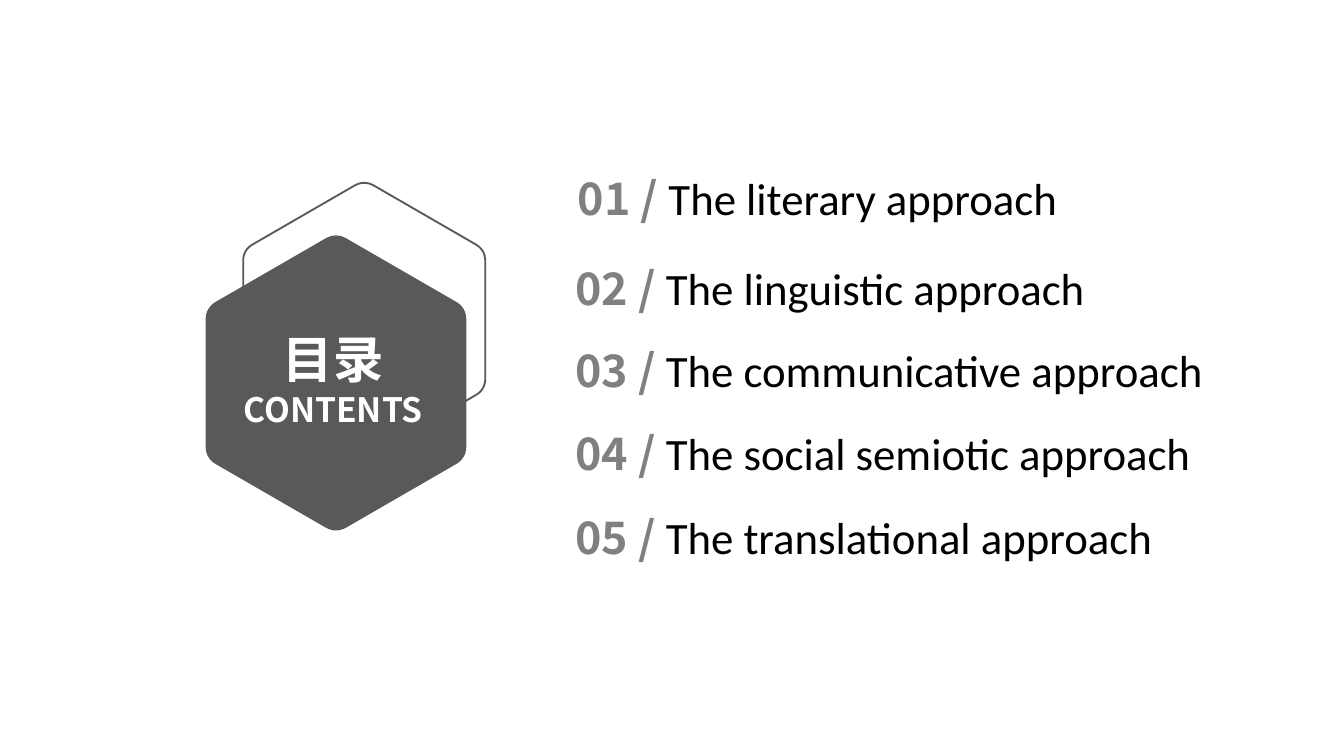
import math
from dataclasses import dataclass

import pptx
import pptx.dml.color
import pptx.enum.text
import pptx.oxml.ns
import pptx.util
from lxml import etree
from pptx.util import Inches


@dataclass(frozen=True)
class Theme:
    dark: pptx.dml.color.RGBColor = pptx.dml.color.RGBColor(0x59, 0x59, 0x59)
    grey: pptx.dml.color.RGBColor = pptx.dml.color.RGBColor(0x80, 0x80, 0x80)
    black: pptx.dml.color.RGBColor = pptx.dml.color.RGBColor(0, 0, 0)
    white: pptx.dml.color.RGBColor = pptx.dml.color.RGBColor(255, 255, 255)
    heading_font: str = "Noto Sans CJK SC"
    body_font: str = "Calibri"
    title_size: int = 27
    subtitle_size: int = 18
    item_size: int = 24


theme = Theme()


def add_rounded_hexagon(page, center_x, center_y, radius):
    """Draw a pointy-top hexagon whose corners are sampled quadratic curves."""
    corners = [
        (center_x + radius * math.sin(math.radians(60 * i)),
         center_y - radius * math.cos(math.radians(60 * i)))
        for i in range(6)
    ]
    cut, steps = 0.08, 8
    points = []
    for i, corner in enumerate(corners):
        before, after = corners[i - 1], corners[(i + 1) % 6]
        start, end = (
            [c + cut * (n - c) for c, n in zip(corner, neighbour)]
            for neighbour in (before, after)
        )
        for step in range(steps + 1):
            t = step / steps
            points.append(tuple(
                Inches((1 - t) ** 2 * s + 2 * t * (1 - t) * c + t ** 2 * e)
                for s, c, e in zip(start, corner, end)
            ))
    builder = page.shapes.build_freeform(*points[0])
    builder.add_line_segments(points[1:], close=True)
    hexagon = builder.convert_to_shape()
    hexagon.shadow.inherit = False
    return hexagon


def set_margins(frame):
    frame.margin_left = frame.margin_right = Inches(0.07)
    frame.margin_top = frame.margin_bottom = Inches(0.04)
    frame.vertical_anchor = pptx.enum.text.MSO_ANCHOR.TOP


deck = pptx.Presentation()
deck.slide_width = Inches(10)
deck.slide_height = Inches(10 * 9 / 16)
page = deck.slides.add_slide(deck.slide_layouts[5])

# Hexagon badge
outline = add_rounded_hexagon(page, 2.71, 2.38, 1.04)
outline.fill.background()
outline.line.color.rgb = theme.dark
outline.line.width = pptx.util.Pt(1)

badge = add_rounded_hexagon(page, 2.5, 2.85, 1.12)
badge.fill.solid()
badge.fill.fore_color.rgb = theme.dark
badge.line.fill.background()

# Title, brought in front of the badge
title = page.shapes.title
title.element.getparent().append(title.element)
title.left, title.top = Inches(1.57), Inches(2.4)
title.width, title.height = Inches(1.82), Inches(0.83)
frame = title.text_frame
frame.text = "目录\nCONTENTS"
frame.word_wrap = True
frame.auto_size = pptx.enum.text.MSO_AUTO_SIZE.NONE
set_margins(frame)
for para, size in zip(frame.paragraphs, (theme.title_size, theme.subtitle_size)):
    para.alignment = pptx.enum.text.PP_ALIGN.CENTER
    para.font.name = theme.heading_font
    para.font.size = pptx.util.Pt(size)
    para.font.bold = True
    para.font.color.rgb = theme.white
    # East Asian glyphs take their typeface from a:ea
    latin = para.font._element.find(pptx.oxml.ns.qn("a:latin"))
    east_asian = etree.Element(pptx.oxml.ns.qn("a:ea"), typeface=theme.heading_font)
    latin.addnext(east_asian)

# Numbered contents
items = [
    (4.23, 1.03, "The literary approach"),
    (4.21, 1.70, "The linguistic approach"),
    (4.21, 2.31, "The communicative approach"),
    (4.21, 2.93, "The social semiotic approach"),
    (4.21, 3.55, "The translational approach"),
]
for number, (left, top, label) in enumerate(items, start=1):
    box = page.shapes.add_textbox(Inches(left), Inches(top), Inches(5.59), Inches(0.62))
    box.text_frame.word_wrap = True
    set_margins(box.text_frame)
    para = box.text_frame.paragraphs[0]
    para.line_spacing = 1.5
    para.font.size = pptx.util.Pt(theme.item_size)
    for text, font, color, bold in (
        (f"{number:02d} / ", theme.heading_font, theme.grey, True),
        (label, theme.body_font, theme.black, False),
    ):
        span = para.add_run()
        span.text = text
        span.font.name = font
        span.font.bold = bold
        span.font.color.rgb = color

deck.save("out.pptx")
